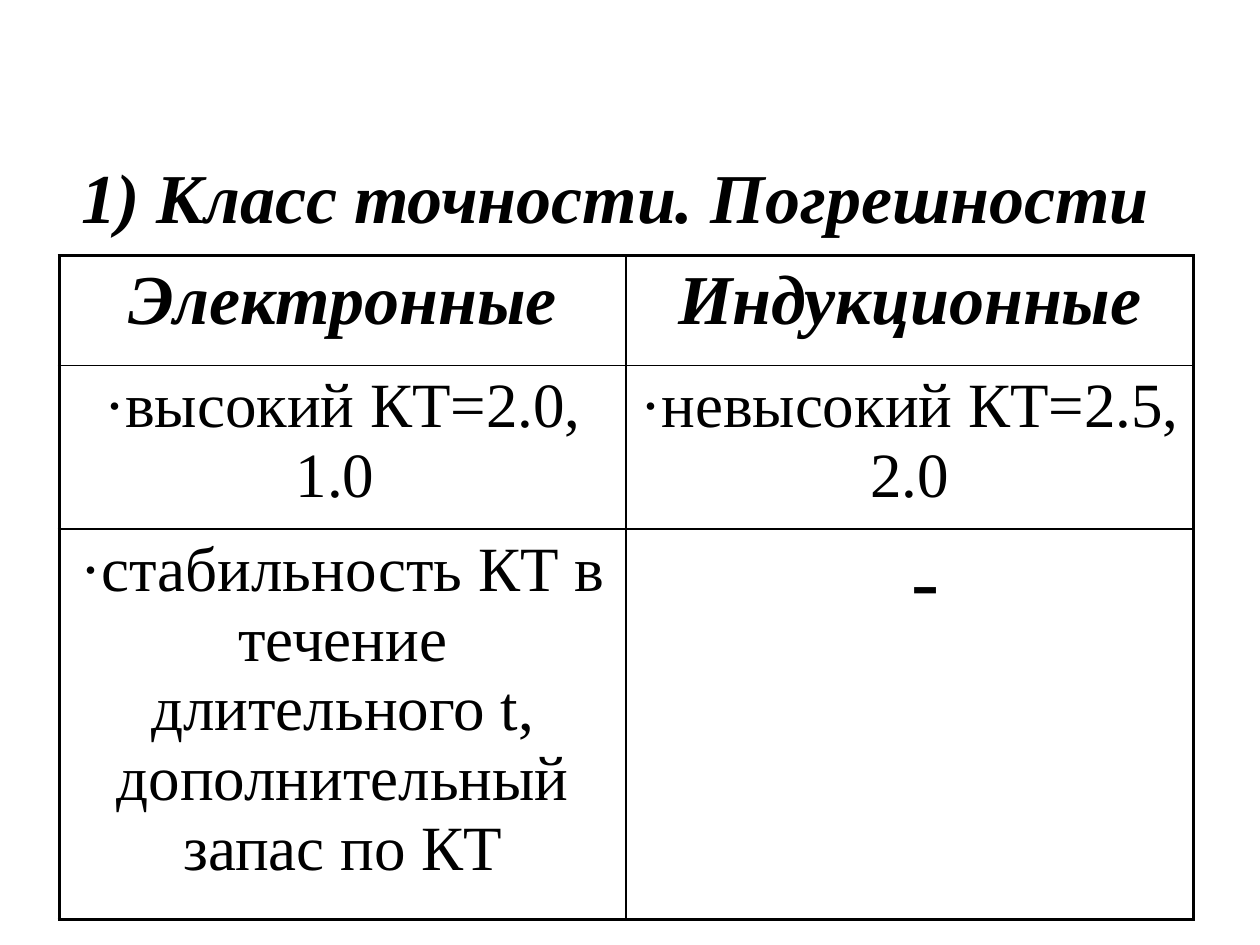
"""Build a slide comparing the accuracy class of electronic and induction meters."""
from dataclasses import dataclass

from lxml.etree import SubElement
from pptx import Presentation
from pptx.dml.color import RGBColor
from pptx.enum.text import MSO_ANCHOR, PP_ALIGN
from pptx.oxml.ns import qn
from pptx.util import Inches, Pt

BLACK = RGBColor(0, 0, 0)
FONT = "Times New Roman"
OUTER, INNER = Pt(2.25), Pt(1)
ROW_HEIGHTS = (0.87, 1.3, 3.1)
COL_WIDTH = 4.5


@dataclass
class Entry:
    text: str
    size: float = 36
    strong: bool = False
    indent: float = 0


TITLE = Entry("1) Класс точности. Погрешности", 40, True)
ROWS = (
    (Entry("Электронные", 40, True), Entry("Индукционные", 40, True)),
    (Entry("·высокий КТ=2.0, 1.0 "), Entry("·невысокий КТ=2.5, 2.0")),
    (
        Entry("·стабильность КТ в течение длительного t, дополнительный запас по КТ"),
        Entry("-", 48, indent=0.25),
    ),
)


def write(tf, entry: Entry) -> None:
    """Put one centred, formatted paragraph into a text frame."""
    tf.word_wrap = True
    p = tf.paragraphs[0]
    p.alignment = PP_ALIGN.CENTER
    p.space_before = Pt(0)
    if entry.indent:
        p._p.get_or_add_pPr().set("marL", str(Inches(entry.indent)))
    r = p.add_run()
    r.text = entry.text
    style = {"name": FONT, "size": Pt(entry.size), "bold": entry.strong, "italic": entry.strong}
    for name, value in style.items():
        setattr(r.font, name, value)
    r.font.color.rgb = BLACK


def set_borders(cell, widths: dict[str, int]) -> None:
    """Draw solid cell borders, then leave the cell unfilled."""
    tc_pr = cell._tc.get_or_add_tcPr()
    for side, width in widths.items():
        ln = SubElement(tc_pr, qn(f"a:{side}"), w=str(width))
        fill = SubElement(ln, qn("a:solidFill"))
        SubElement(fill, qn("a:srgbClr"), val=str(BLACK))
    cell.fill.background()


def add_title(s) -> None:
    """Place and fill the title placeholder."""
    sp = s.shapes.title
    box = {"left": 0.47, "top": 1.17, "width": 8.82, "height": 0.77}
    for name, value in box.items():
        setattr(sp, name, Inches(value))
    sp.text_frame.vertical_anchor = MSO_ANCHOR.TOP
    write(sp.text_frame, TITLE)


def add_comparison(s) -> None:
    """Add the table with a heavy frame and thin inner lines."""
    n_rows, n_cols = len(ROWS), len(ROWS[0])
    table = s.shapes.add_table(
        n_rows, n_cols, Inches(0.47), Inches(2.03),
        Inches(COL_WIDTH * n_cols), Inches(sum(ROW_HEIGHTS)),
    ).table
    table.first_row = table.horz_banding = False
    for col in table.columns:
        col.width = Inches(COL_WIDTH)
    for i, (entries, height) in enumerate(zip(ROWS, ROW_HEIGHTS)):
        table.rows[i].height = Inches(height)
        for j, entry in enumerate(entries):
            cell = table.cell(i, j)
            write(cell.text_frame, entry)
            edges = {"lnL": j == 0, "lnR": j == n_cols - 1, "lnT": i == 0, "lnB": i == n_rows - 1}
            set_borders(cell, {side: OUTER if edge else INNER for side, edge in edges.items()})


def main() -> None:
    """Create and save the presentation."""
    prs = Presentation()
    prs.slide_width, prs.slide_height = Inches(10), Inches(7.5)
    s = prs.slides.add_slide(prs.slide_layouts[5])
    add_title(s)
    add_comparison(s)
    prs.save("out.pptx")


if __name__ == "__main__":
    main()
